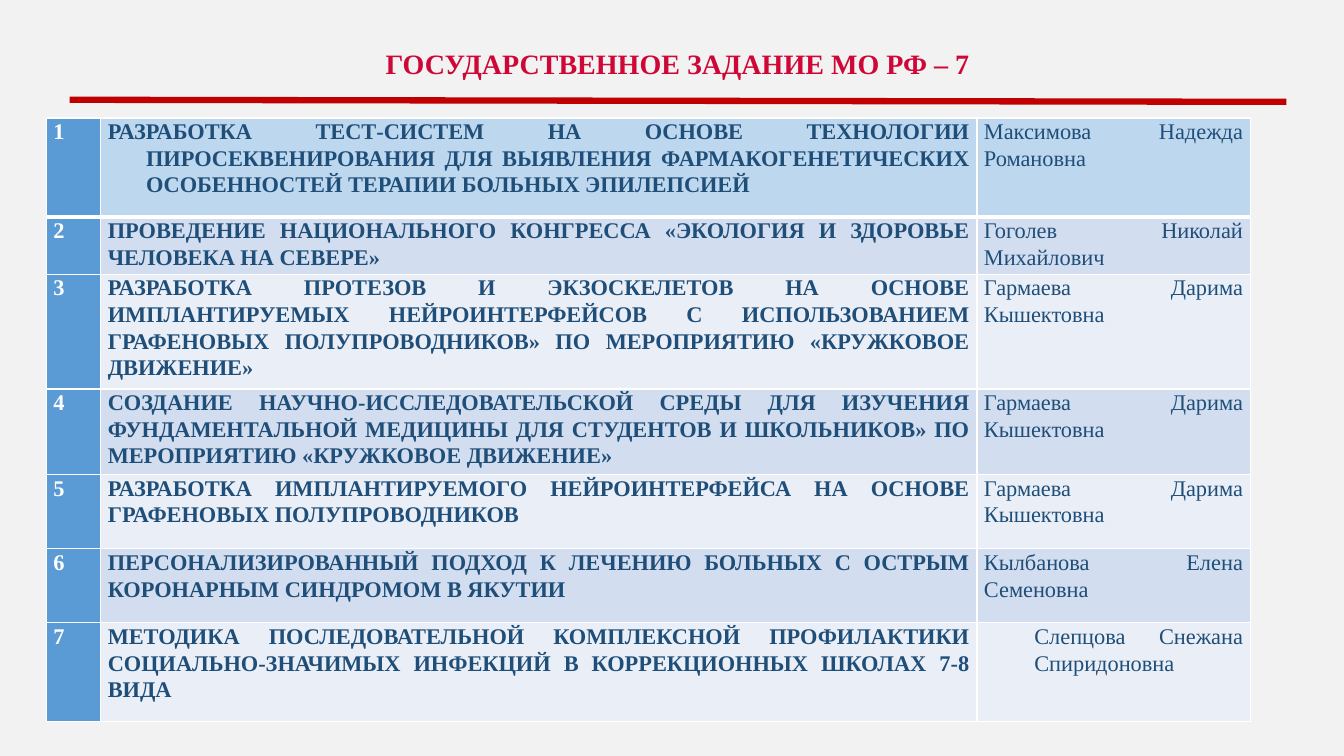
from dataclasses import dataclass

from lxml import etree
from pptx import Presentation
from pptx.dml.color import RGBColor
from pptx.enum.shapes import MSO_CONNECTOR
from pptx.enum.text import MSO_ANCHOR, MSO_AUTO_SIZE, PP_ALIGN
from pptx.oxml.ns import qn
from pptx.util import Inches, Pt

STRAIGHT = MSO_CONNECTOR.STRAIGHT
TOP = MSO_ANCHOR.TOP
NO_AUTOFIT = MSO_AUTO_SIZE.NONE
CENTER = PP_ALIGN.CENTER
JUSTIFY = PP_ALIGN.JUSTIFY

SLIDE_WIDTH = Inches(13.33)
SLIDE_HEIGHT = Inches(7.5)
TITLE_ONLY_LAYOUT = 5


@dataclass(frozen=True)
class Theme:
    """Colours, font, type sizes and line widths of the slide."""

    font: str = "Times New Roman"
    background: str = "F2F2F2"
    title: str = "CF0737"
    rule: str = "C00000"
    ink: str = "1F4E79"
    white: str = "FFFFFF"
    number_fill: str = "5B9BD5"
    first_fill: str = "BDD7EE"
    band_fills: tuple = ("EAEFF7", "D2DEEF")
    title_size: int = 20
    table_size: int = 16
    rule_width: float = 4.5
    border_width: int = 1
    first_border_width: int = 3


THEME = Theme()

LEFT = 3.45
TITLE_TOP, TITLE_WIDTH, TITLE_HEIGHT = 4.53, 93.92, 8
RULE_START, RULE_END = (5.18, 13.2), (95.72, 13.47)
TABLE_TOP = 15.6
COLUMN_SHARES = (4.05, 65.19, 20.33)
ROW_SHARES = (13.07, 7.6, 15.2, 11.33, 9.8, 9.8, 13.07)

TITLE = "ГОСУДАРСТВЕННОЕ ЗАДАНИЕ МО РФ – 7"
PROJECTS = (
    ("РАЗРАБОТКА ТЕСТ-СИСТЕМ НА ОСНОВЕ ТЕХНОЛОГИИ ПИРОСЕКВЕНИРОВАНИЯ ДЛЯ ВЫЯВЛЕНИЯ "
     "ФАРМАКОГЕНЕТИЧЕСКИХ ОСОБЕННОСТЕЙ ТЕРАПИИ БОЛЬНЫХ ЭПИЛЕПСИЕЙ",
     "Максимова Надежда Романовна"),
    ("ПРОВЕДЕНИЕ НАЦИОНАЛЬНОГО КОНГРЕССА «ЭКОЛОГИЯ И ЗДОРОВЬЕ ЧЕЛОВЕКА НА СЕВЕРЕ»",
     "Гоголев Николай Михайлович"),
    ("РАЗРАБОТКА ПРОТЕЗОВ И ЭКЗОСКЕЛЕТОВ НА ОСНОВЕ ИМПЛАНТИРУЕМЫХ НЕЙРОИНТЕРФЕЙСОВ "
     "С ИСПОЛЬЗОВАНИЕМ ГРАФЕНОВЫХ ПОЛУПРОВОДНИКОВ» ПО МЕРОПРИЯТИЮ «КРУЖКОВОЕ ДВИЖЕНИЕ»",
     "Гармаева Дарима Кышектовна"),
    ("СОЗДАНИЕ НАУЧНО-ИССЛЕДОВАТЕЛЬСКОЙ СРЕДЫ ДЛЯ ИЗУЧЕНИЯ ФУНДАМЕНТАЛЬНОЙ МЕДИЦИНЫ "
     "ДЛЯ СТУДЕНТОВ И ШКОЛЬНИКОВ» ПО МЕРОПРИЯТИЮ «КРУЖКОВОЕ ДВИЖЕНИЕ»",
     "Гармаева Дарима Кышектовна"),
    ("РАЗРАБОТКА ИМПЛАНТИРУЕМОГО НЕЙРОИНТЕРФЕЙСА НА ОСНОВЕ ГРАФЕНОВЫХ ПОЛУПРОВОДНИКОВ",
     "Гармаева Дарима Кышектовна"),
    ("ПЕРСОНАЛИЗИРОВАННЫЙ ПОДХОД К ЛЕЧЕНИЮ БОЛЬНЫХ С ОСТРЫМ КОРОНАРНЫМ СИНДРОМОМ В ЯКУТИИ",
     "Кылбанова Елена Семеновна"),
    ("МЕТОДИКА ПОСЛЕДОВАТЕЛЬНОЙ КОМПЛЕКСНОЙ ПРОФИЛАКТИКИ СОЦИАЛЬНО-ЗНАЧИМЫХ ИНФЕКЦИЙ "
     "В КОРРЕКЦИОННЫХ ШКОЛАХ 7-8 ВИДА",
     "Слепцова Снежана Спиридоновна"),
)
INDENTS = {(0, 1): (0.38, -0.38), (6, 2): (0.5, 0)}


def across(percent):
    """Return a share of the slide's width."""
    return round(SLIDE_WIDTH * percent / 100)


def down(percent):
    """Return a share of the slide's height."""
    return round(SLIDE_HEIGHT * percent / 100)


def write(paragraph, text, size, color, bold, alignment, spacing):
    """Add one formatted run to a paragraph."""
    paragraph.alignment = alignment
    paragraph.line_spacing = spacing
    run = paragraph.add_run()
    run.text = text
    run.font.name = THEME.font
    run.font.size = Pt(size)
    run.font.bold = bold
    run.font.color.rgb = RGBColor.from_string(color)


def add_title(slide):
    """Place and format the title placeholder."""
    title = slide.shapes.title
    title.left, title.top = across(LEFT), down(TITLE_TOP)
    title.width, title.height = across(TITLE_WIDTH), down(TITLE_HEIGHT)
    frame = title.text_frame
    frame.word_wrap = True
    frame.auto_size = NO_AUTOFIT
    frame.vertical_anchor = TOP
    write(frame.paragraphs[0], TITLE, THEME.title_size, THEME.title, True, CENTER, 1.2)


def add_rule(slide):
    """Draw the red rule under the title."""
    (start_x, start_y), (end_x, end_y) = RULE_START, RULE_END
    rule = slide.shapes.add_connector(
        STRAIGHT, across(start_x), down(start_y), across(end_x), down(end_y))
    rule.line.color.rgb = RGBColor.from_string(THEME.rule)
    rule.line.width = Pt(THEME.rule_width)
    etree.SubElement(rule._element.spPr, qn("a:effectLst"))


def set_borders(cell, row):
    """Give a cell white borders, heavier below the first row."""
    thin, thick = THEME.border_width, THEME.first_border_width
    widths = {"lnL": thin, "lnR": thin,
              "lnT": thick if row == 1 else thin,
              "lnB": thick if row == 0 else thin}
    properties = cell._tc.get_or_add_tcPr()
    for side, width in widths.items():
        line = etree.SubElement(properties, qn(f"a:{side}"), w=str(Pt(width)))
        fill = etree.SubElement(line, qn("a:solidFill"))
        etree.SubElement(fill, qn("a:srgbClr"), val=THEME.white)


def fill_color(row, column):
    """Return the fill of a cell from its place in the table."""
    if column == 0:
        return THEME.number_fill
    return THEME.first_fill if row == 0 else THEME.band_fills[row % 2]


def format_cell(cell, row, column, text):
    """Write and style one table cell."""
    cell.margin_left = cell.margin_right = Inches(0.07)
    cell.margin_top = cell.margin_bottom = 0
    set_borders(cell, row)
    cell.fill.solid()
    cell.fill.fore_color.rgb = RGBColor.from_string(fill_color(row, column))
    paragraph = cell.text_frame.paragraphs[0]
    color = THEME.white if column == 0 else THEME.ink
    write(paragraph, text, THEME.table_size, color, column < 2, JUSTIFY, 1.07)
    if (row, column) in INDENTS:
        margin, indent = INDENTS[row, column]
        properties = paragraph._p.get_or_add_pPr()
        properties.set("marL", str(Inches(margin)))
        properties.set("indent", str(Inches(indent)))


def add_project_table(slide):
    """Build the table of projects and their leaders."""
    table = slide.shapes.add_table(
        len(PROJECTS), len(COLUMN_SHARES), across(LEFT), down(TABLE_TOP),
        across(sum(COLUMN_SHARES)), down(sum(ROW_SHARES))).table
    table.first_row = False
    table.horz_banding = False
    for column, share in zip(table.columns, COLUMN_SHARES):
        column.width = across(share)
    for row, share in zip(table.rows, ROW_SHARES):
        row.height = down(share)
    for row, (project, leader) in enumerate(PROJECTS):
        for column, text in enumerate((str(row + 1), project, leader)):
            format_cell(table.cell(row, column), row, column, text)


def main():
    """Build and save the slide."""
    presentation = Presentation()
    presentation.slide_width = SLIDE_WIDTH
    presentation.slide_height = SLIDE_HEIGHT
    slide = presentation.slides.add_slide(presentation.slide_layouts[TITLE_ONLY_LAYOUT])
    slide.background.fill.solid()
    slide.background.fill.fore_color.rgb = RGBColor.from_string(THEME.background)
    add_title(slide)
    add_rule(slide)
    add_project_table(slide)
    presentation.save("out.pptx")


if __name__ == "__main__":
    main()
